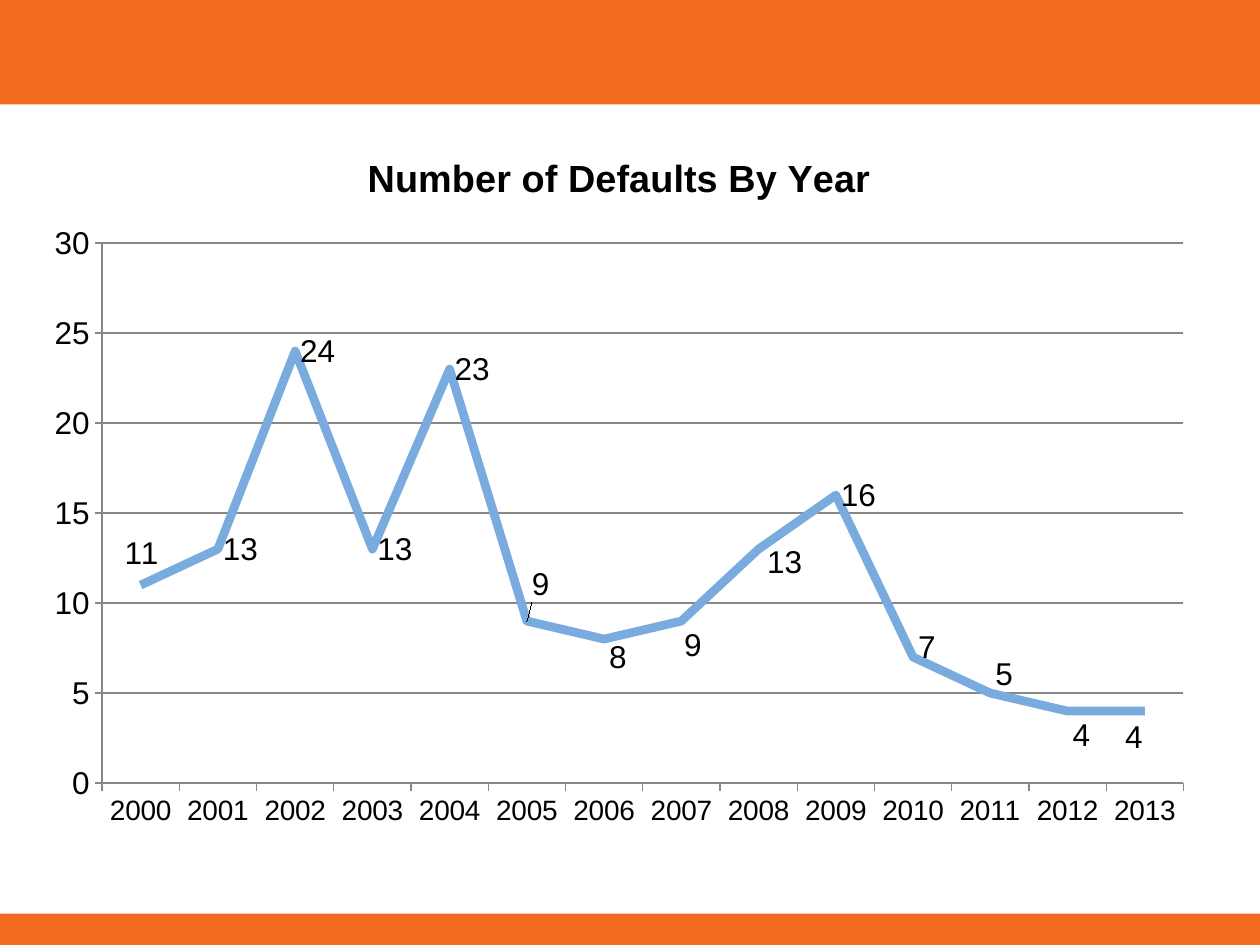
from dataclasses import dataclass

from lxml.etree import SubElement
from pptx import Presentation
from pptx.chart.chart import Chart
from pptx.chart.data import CategoryChartData
from pptx.chart.series import LineSeries
from pptx.dml.color import RGBColor
from pptx.enum.chart import XL_CHART_TYPE, XL_LABEL_POSITION, XL_TICK_MARK
from pptx.enum.shapes import MSO_SHAPE
from pptx.oxml.ns import qn
from pptx.slide import Slide
from pptx.util import Inches, Pt

ORANGE, BLUE, GRAY, BLACK = "F46A1F", "7AABDE", "878787", "000000"
CHART_W, CHART_H = 9.33, 5.67
DEFAULTS = [11, 13, 24, 13, 23, 9, 8, 9, 13, 16, 7, 5, 4, 4]


@dataclass
class Band:
    top: float
    height: float


@dataclass
class LabelShift:
    """Inches by which a point's label moves from its place right of the point."""
    point: int
    dx: float
    dy: float


BANDS = [Band(0, 0.83), Band(7.25, 0.25)]
SHIFTS = [
    LabelShift(0, -0.17, -0.25),
    LabelShift(5, 0, -0.29),
    LabelShift(6, 0, 0.15),
    LabelShift(7, -0.02, 0.19),
    LabelShift(8, 0.03, 0.11),
    LabelShift(10, 0, -0.08),
    LabelShift(11, 0, -0.15),
    LabelShift(12, 0, 0.19),
    LabelShift(13, -0.2, 0.21),
]


def rgb(color: str) -> RGBColor:
    return RGBColor.from_string(color)


def set_font(font, size: float, bold: bool = False) -> None:
    values = {"name": "Arial", "size": Pt(size), "bold": bold}
    for name, value in values.items():
        setattr(font, name, value)
    font.color.rgb = rgb(BLACK)


def set_line(line, color: str, width: float) -> None:
    line.color.rgb = rgb(color)
    line.width = Pt(width)


def add_band(s: Slide, band: Band) -> None:
    sp = s.shapes.add_shape(MSO_SHAPE.RECTANGLE, 0, Inches(band.top),
                            Inches(10), Inches(band.height))
    sp.shadow.inherit = False
    sp.fill.solid()
    sp.fill.fore_color.rgb = rgb(ORANGE)
    sp.line.fill.background()


def add_layout(parent, values: dict[str, object]):
    layout = SubElement(parent, qn("c:layout"))
    manual = SubElement(layout, qn("c:manualLayout"))
    for tag, value in values.items():
        SubElement(manual, qn(f"c:{tag}")).set("val", str(value))
    return layout


def place_plot(chart: Chart) -> None:
    plot_area = chart.plots[0]._element.getparent()
    for old in plot_area.findall(qn("c:layout")):
        plot_area.remove(old)
    layout = add_layout(plot_area, {
        "layoutTarget": "inner", "xMode": "edge", "yMode": "edge",
        "x": 0.06, "y": 0.164, "w": 0.92, "h": 0.756})
    plot_area.insert(0, layout)


def shift_label(series: LineSeries, shift: LabelShift) -> None:
    label = series.points[shift.point].data_label
    set_font(label.font, 18)
    label.position = XL_LABEL_POSITION.RIGHT
    for element in series.data_labels._element.findall(qn("c:dLbl")):
        idx = element.find(qn("c:idx"))
        if idx.get("val") == str(shift.point):
            idx.addnext(add_layout(element, {
                "x": round(shift.dx / CHART_W, 3),
                "y": round(shift.dy / CHART_H, 3)}))


def format_axes(chart: Chart) -> None:
    for axis, size in ((chart.category_axis, 16), (chart.value_axis, 18)):
        set_font(axis.tick_labels.font, size)
        set_line(axis.format.line, GRAY, 0.75)
        axis.major_tick_mark = XL_TICK_MARK.OUTSIDE
    axis = chart.value_axis
    values = {"minimum_scale": 0, "maximum_scale": 30, "major_unit": 5,
              "has_major_gridlines": True}
    for name, value in values.items():
        setattr(axis, name, value)
    set_line(axis.major_gridlines.format.line, GRAY, 0.75)


def add_defaults_chart(s: Slide) -> None:
    data = CategoryChartData()
    data.categories = [str(year) for year in range(2000, 2014)]
    data.add_series("Series 1", DEFAULTS)
    chart = s.shapes.add_chart(XL_CHART_TYPE.LINE, Inches(0.25), Inches(1),
                               Inches(CHART_W), Inches(CHART_H), data).chart
    set_font(chart.font, 18)
    chart.has_legend = False
    chart.has_title = True
    p = chart.chart_title.text_frame.paragraphs[0]
    r = p.add_run()
    r.text = "Number of Defaults By Year"
    set_font(r.font, 21.6, bold=True)
    format_axes(chart)
    place_plot(chart)

    chart.plots[0].vary_by_categories = False
    series = chart.plots[0].series[0]
    series.smooth = False
    set_line(series.format.line, BLUE, 5)
    labels = series.data_labels
    labels.show_value = True
    labels.position = XL_LABEL_POSITION.RIGHT
    set_font(labels.font, 18)
    for shift in SHIFTS:
        shift_label(series, shift)


def main() -> None:
    prs = Presentation()
    prs.slide_width, prs.slide_height = Inches(10), Inches(7.5)
    s = prs.slides.add_slide(prs.slide_layouts[6])
    for band in BANDS:
        add_band(s, band)
    add_defaults_chart(s)
    prs.save("out.pptx")


if __name__ == "__main__":
    main()
